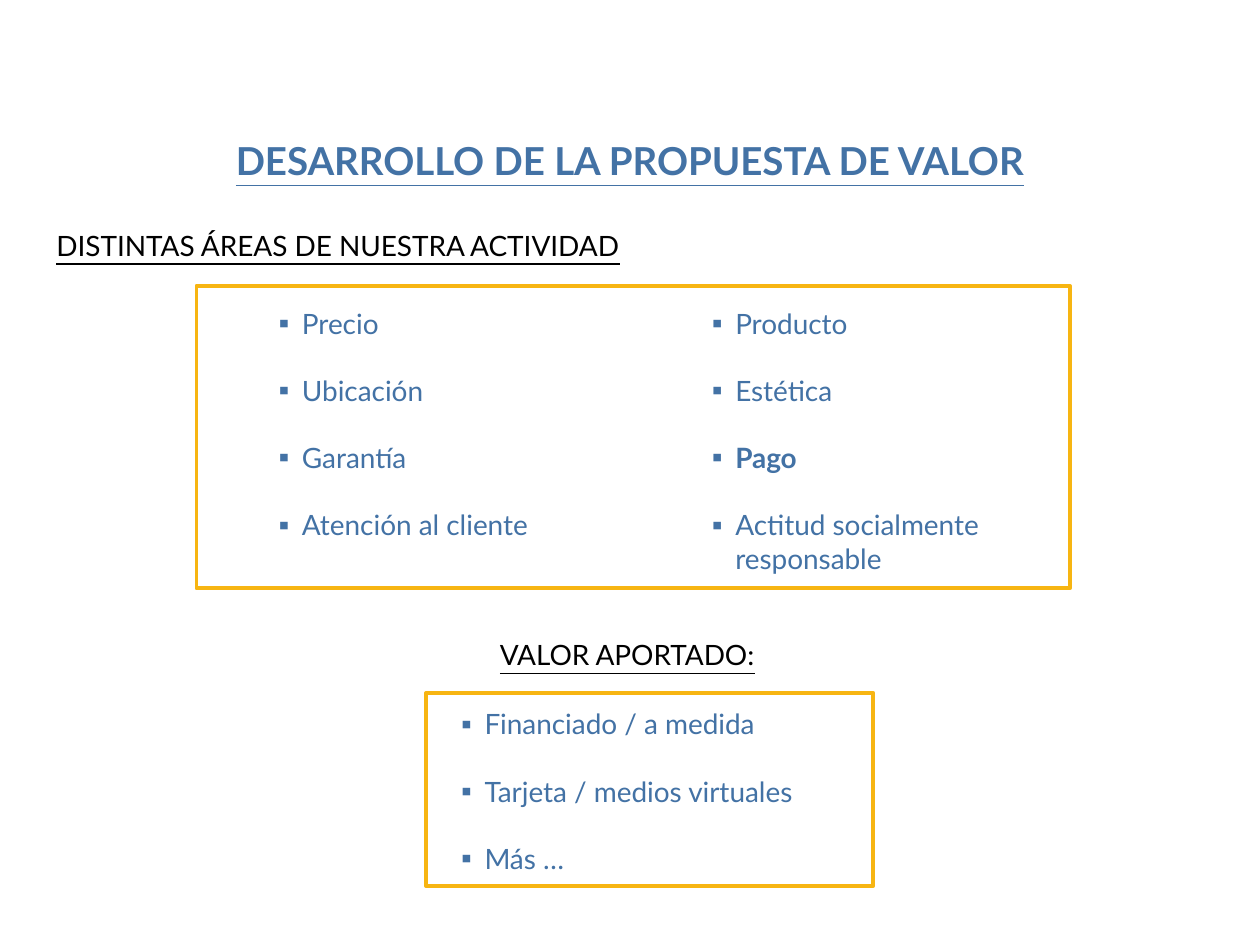
from lxml import etree
from pptx import Presentation
from pptx.dml.color import RGBColor
from pptx.enum.shapes import MSO_SHAPE
from pptx.enum.text import PP_ALIGN
from pptx.oxml.ns import qn
from pptx.util import Pt

RECTANGLE = MSO_SHAPE.RECTANGLE
LEFT, CENTER = PP_ALIGN.LEFT, PP_ALIGN.CENTER
COLORS = {"blue": "4372A5", "black": "000000", "gold": "F7B512"}
FONT = "Lato"
TEXT_SIZE = 16
BULLET_INDENT = 13.5
BULLET_GAP = 19.2


def add_text_box(left, top, width, height):
    text_frame = slide.shapes.add_textbox(Pt(left), Pt(top), Pt(width), Pt(height)).text_frame
    text_frame.word_wrap = True
    return text_frame


def add_run(paragraph, text, size, color, bold=False, underline=False):
    run = paragraph.add_run()
    run.text = text
    run.font.name = FONT
    run.font.size = Pt(size)
    run.font.bold = bold
    run.font.underline = underline
    run.font.color.rgb = RGBColor.from_string(COLORS[color])


presentation = Presentation()
presentation.slide_width = Pt(720)
presentation.slide_height = Pt(540)
slide = presentation.slides.add_slide(presentation.slide_layouts[6])

headings = [
    ("DESARROLLO DE LA PROPUESTA DE VALOR", 33.8, 74.9, 652.3, 45, 22, "blue", True, CENTER),
    ("DISTINTAS ÁREAS DE NUESTRA ACTIVIDAD", 25.2, 127.2, 414.7, 26.5, TEXT_SIZE, "black", False, LEFT),
    ("VALOR APORTADO:", 278.6, 361, 273.6, 26.5, TEXT_SIZE, "black", False, LEFT),
]
for text, left, top, width, height, size, color, bold, alignment in headings:
    paragraph = add_text_box(left, top, width, height).paragraphs[0]
    paragraph.alignment = alignment
    add_run(paragraph, text, size, color, bold, underline=True)

frames = [(112.3, 163.4, 499, 172.8), (243.4, 396, 255.6, 110.2)]
for left, top, width, height in frames:
    frame = slide.shapes.add_shape(RECTANGLE, Pt(left), Pt(top), Pt(width), Pt(height))
    frame.shadow.inherit = False
    frame.fill.background()
    frame.line.color.rgb = RGBColor.from_string(COLORS["gold"])
    frame.line.width = Pt(2.25)
    etree.SubElement(frame.line._get_or_add_ln(), qn("a:round"))

bullet_lists = [
    (152, 171.4, 208, 160, ["Precio", "Ubicación", "Garantía", "Atención al cliente"]),
    (399.6, 171.4, 244, 160, ["Producto", "Estética", "Pago", "Actitud socialmente responsable"]),
    (256.3, 400.4, 283.7, 104, ["Financiado / a medida", "Tarjeta / medios virtuales", "Más …"]),
]
for left, top, width, height, items in bullet_lists:
    text_frame = add_text_box(left, top, width, height)
    for index, item in enumerate(items):
        paragraph = text_frame.add_paragraph() if index else text_frame.paragraphs[0]
        paragraph.space_before = Pt(BULLET_GAP if index else 0)
        properties = paragraph._p.get_or_add_pPr()
        properties.set("marL", str(Pt(BULLET_INDENT)))
        properties.set("indent", str(-Pt(BULLET_INDENT)))
        bullet_color = etree.SubElement(properties, qn("a:buClr"))
        etree.SubElement(bullet_color, qn("a:srgbClr"), val=COLORS["blue"])
        etree.SubElement(properties, qn("a:buFont"), typeface=FONT)
        etree.SubElement(properties, qn("a:buChar"), char="▪")
        add_run(paragraph, item, TEXT_SIZE, "blue", bold=item == "Pago")

presentation.save("out.pptx")
